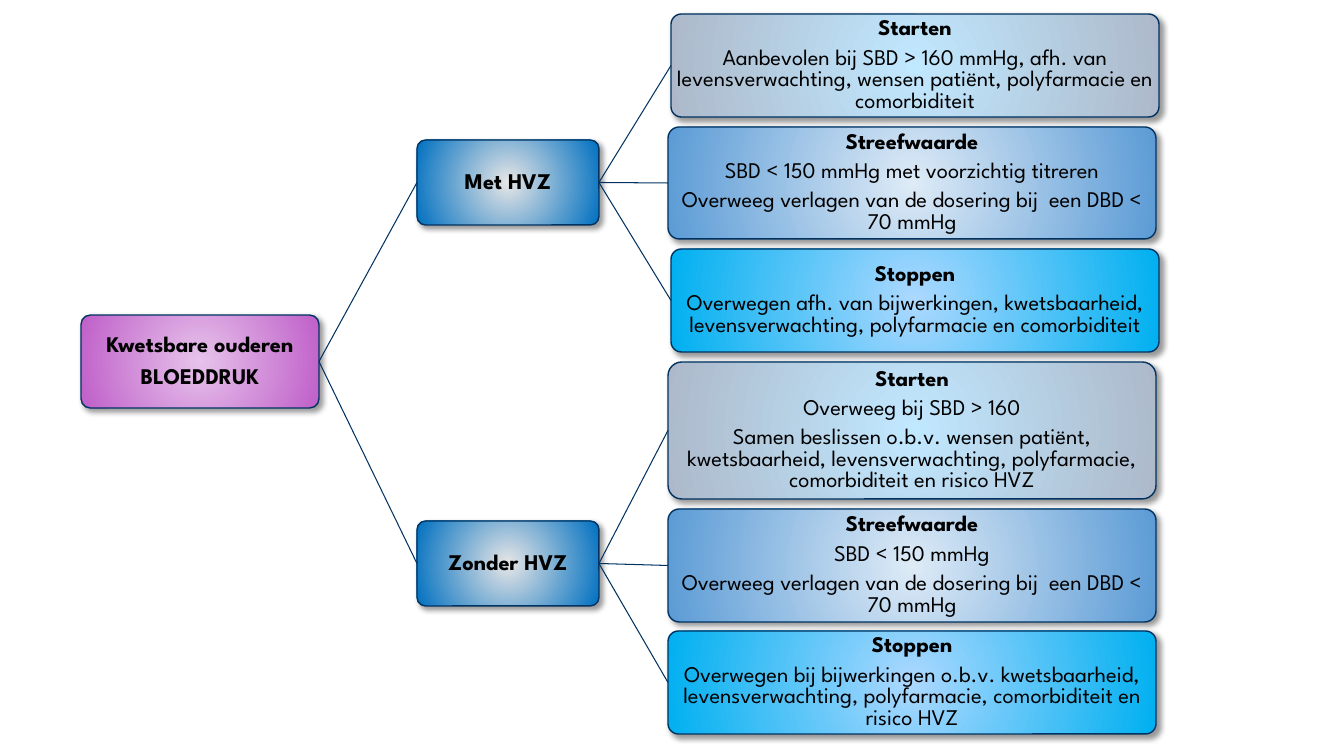
from dataclasses import dataclass

from lxml import etree
from pptx import Presentation
from pptx.dml.color import RGBColor
from pptx.enum.shapes import MSO_CONNECTOR, MSO_SHAPE
from pptx.enum.text import MSO_ANCHOR, PP_ALIGN
from pptx.oxml import parse_xml
from pptx.oxml.ns import qn
from pptx.util import Pt

ROUND = MSO_SHAPE.ROUNDED_RECTANGLE
STRAIGHT = MSO_CONNECTOR.STRAIGHT
MIDDLE = MSO_ANCHOR.MIDDLE
CENTER = PP_ALIGN.CENTER
LEFT, RIGHT = 1, 3
NS = 'xmlns:a="http://schemas.openxmlformats.org/drawingml/2006/main"'
RADIAL = f"""<a:path {NS} path="circle">
<a:fillToRect l="50000" t="50000" r="50000" b="50000"/></a:path>"""
SHADOW = f"""<a:outerShdw {NS} blurRad="50800" dist="38100" dir="2700000"
algn="tl" rotWithShape="0"><a:srgbClr val="000000"><a:alpha val="40000"/>
</a:srgbClr></a:outerShdw>"""


@dataclass(frozen=True)
class Theme:
    font: str = "League Spartan"
    size: float = 16
    gap: float = 5.6
    edge: float = 1
    link: float = 0.75
    ink: str = "000000"
    line: str = "003361"
    root: tuple = ("E7C3EB", "BF5FC9")
    group: tuple = ("E7E6E6", "0070C0")
    start: tuple = ("C0E8FF", "ADB9CA")
    target: tuple = ("DEEBF7", "5B9BD5")
    stop: tuple = ("ACD8FF", "00B0F0")


def px(count):
    return round(count * 914400 / 100.8)


def rgb(code):
    return RGBColor.from_string(code)


class Chart:
    def __init__(self, slide, theme):
        self.slide = slide
        self.theme = theme

    def box(self, area, colors, lines, bold=1, lead=0.9):
        shape = self.slide.shapes.add_shape(ROUND, *map(px, area))
        shape.adjustments[0] = 0.1
        self.paint(shape, colors)
        frame = shape.text_frame
        frame.word_wrap = True
        frame.vertical_anchor = MIDDLE
        frame.margin_left = frame.margin_right = px(1)
        frame.margin_top = frame.margin_bottom = px(1)
        frame.text = "\n".join(lines)
        for index, para in enumerate(frame.paragraphs):
            para.alignment = CENTER
            para.line_spacing = lead
            para.space_after = Pt(self.theme.gap)
            para.font.name = self.theme.font
            para.font.size = Pt(self.theme.size)
            para.font.bold = index < bold
            para.font.color.rgb = rgb(self.theme.ink)
        return shape

    def paint(self, shape, colors):
        shape.fill.gradient()
        for stop, code, place in zip(shape.fill.gradient_stops, colors, (0, 1)):
            stop.color.rgb = rgb(code)
            stop.position = place
        props = shape.element.spPr
        grad = props.find(qn("a:gradFill"))
        grad.replace(grad.find(qn("a:lin")), parse_xml(RADIAL))
        shape.line.color.rgb = rgb(self.theme.line)
        shape.line.width = Pt(self.theme.edge)
        shape.shadow.inherit = False
        props.find(qn("a:effectLst")).append(parse_xml(SHADOW))

    def join(self, first, second):
        link = self.slide.shapes.add_connector(STRAIGHT, 0, 0, 0, 0)
        link.begin_connect(first, RIGHT)
        link.end_connect(second, LEFT)
        link.line.color.rgb = rgb(self.theme.line)
        link.line.width = Pt(self.theme.link)
        etree.SubElement(link.element.spPr, qn("a:effectLst"))


def main():
    deck = Presentation()
    deck.slide_width, deck.slide_height = px(1344), px(756)
    theme = Theme()
    chart = Chart(deck.slides.add_slide(deck.slide_layouts[6]), theme)
    lower = "Overweeg verlagen van de dosering bij  een DBD < 70 mmHg"
    tree = (
        ("Met HVZ", 140, (
            (671, 14, 103, theme.start, (
                "Starten",
                "Aanbevolen bij SBD > 160 mmHg, afh. van levensverwachting, "
                "wensen patiënt, polyfarmacie en comorbiditeit")),
            (668, 127, 112, theme.target, (
                "Streefwaarde",
                "SBD < 150 mmHg met voorzichtig titreren",
                lower)),
            (671, 249, 103, theme.stop, (
                "Stoppen",
                "Overwegen afh. van bijwerkingen, kwetsbaarheid, "
                "levensverwachting, polyfarmacie en comorbiditeit")),
        )),
        ("Zonder HVZ", 521, (
            (668, 362, 137, theme.start, (
                "Starten",
                "Overweeg bij SBD > 160",
                "Samen beslissen o.b.v. wensen patiënt, kwetsbaarheid, "
                "levensverwachting, polyfarmacie, comorbiditeit en risico HVZ")),
            (668, 509, 113, theme.target, (
                "Streefwaarde",
                "SBD < 150 mmHg",
                lower)),
            (668, 631, 103, theme.stop, (
                "Stoppen",
                "Overwegen bij bijwerkingen o.b.v. kwetsbaarheid, "
                "levensverwachting, polyfarmacie, comorbiditeit en risico HVZ")),
        )),
    )
    root = chart.box((81, 315, 238, 93), theme.root,
                     ("Kwetsbare ouderen", "BLOEDDRUK"), bold=2)
    for name, top, leaves in tree:
        group = chart.box((417, top, 182, 85), theme.group, (name,))
        chart.join(root, group)
        for x, y, height, colors, lines in leaves:
            leaf = chart.box((x, y, 488, height), colors, lines, lead=0.8)
            chart.join(group, leaf)
    deck.save("out.pptx")


if __name__ == "__main__":
    main()
